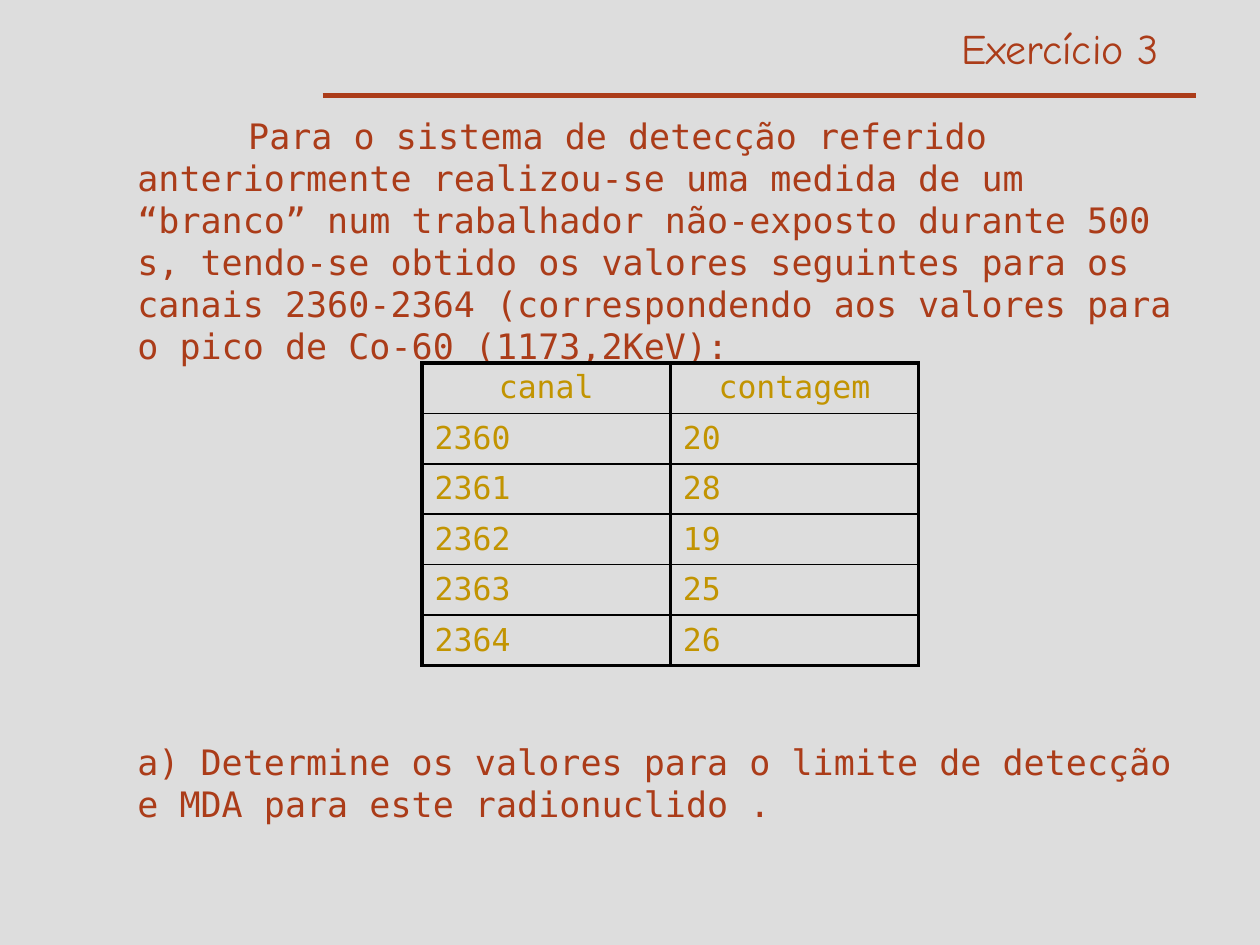
from dataclasses import dataclass

from lxml import etree
from pptx import Presentation
from pptx.dml.color import RGBColor
from pptx.enum.shapes import MSO_CONNECTOR
from pptx.enum.text import MSO_ANCHOR, PP_ALIGN
from pptx.oxml.ns import qn
from pptx.util import Inches, Pt

LEFT, CENTER, RIGHT = PP_ALIGN.LEFT, PP_ALIGN.CENTER, PP_ALIGN.RIGHT
MIDDLE = MSO_ANCHOR.MIDDLE
STRAIGHT = MSO_CONNECTOR.STRAIGHT
COLS, ROWS = 100, 75


@dataclass(frozen=True)
class Theme:
    back: str = "DDDDDD"
    rust: str = "AB3C19"
    gold: str = "C29401"
    black: str = "000000"
    hand: str = "Comic Neue"
    mono: str = "DejaVu Sans Mono"
    title: int = 24
    body: int = 20
    cell: int = 18
    rule: float = 3
    thick: float = 2.25
    thin: float = 1


THEME = Theme()
INTRO = (
    "Para o sistema de detecção referido anteriormente realizou-se uma medida "
    "de um “branco” num trabalhador não-exposto durante 500 s, tendo-se obtido "
    "os valores seguintes para os canais 2360-2364 (correspondendo aos valores "
    "para o pico de Co-60 (1173,2KeV):"
)
TASK = "a) Determine os valores para o limite de detecção e MDA para este radionuclido ."
COUNTS = [
    ("canal", "contagem"),
    ("2360", "20"),
    ("2361", "28"),
    ("2362", "19"),
    ("2363", "25"),
    ("2364", "26"),
]


def grid(units):
    return Inches(units * 10 / COLS)


def style(frame, text, font, size, color, align=LEFT):
    frame.text = text
    para = frame.paragraphs[0]
    para.alignment = align
    face = para.runs[0].font
    face.name = font
    face.size = Pt(size)
    face.color.rgb = RGBColor.from_string(color)
    return para


def add_text(slide, area, text, font, size, align=LEFT, indent=0):
    frame = slide.shapes.add_textbox(*map(grid, area)).text_frame
    frame.word_wrap = True
    frame.margin_left = frame.margin_right = 0
    para = style(frame, text, font, size, THEME.rust, align)
    if indent:
        para._p.get_or_add_pPr().set("indent", str(grid(indent)))


def add_rule(slide, left, right, top):
    rule = slide.shapes.add_connector(STRAIGHT, *map(grid, (left, top, right, top)))
    rule.line.color.rgb = RGBColor.from_string(THEME.rust)
    rule.line.width = Pt(THEME.rule)
    etree.SubElement(rule._element.spPr, qn("a:effectLst"))


def add_edge(props, side, width):
    edge = etree.Element(qn(f"a:ln{side}"), w=str(Pt(width)))
    fill = etree.SubElement(edge, qn("a:solidFill"))
    etree.SubElement(fill, qn("a:srgbClr"), val=THEME.black)
    return edge


def set_edges(cell, first, last):
    widths = {
        "L": THEME.thick,
        "R": THEME.thick,
        "T": THEME.thick if first else THEME.thin,
        "B": THEME.thick if last else THEME.thin,
    }
    props = cell._tc.get_or_add_tcPr()
    for spot, (side, width) in enumerate(widths.items()):
        props.insert(spot, add_edge(props, side, width))


def add_counts(slide, area, data):
    shape = slide.shapes.add_table(len(data), len(data[0]), *map(grid, area))
    table = shape.table
    table.first_row = table.horz_banding = False
    for row, values in enumerate(data):
        for col, value in enumerate(values):
            cell = table.cell(row, col)
            cell.fill.background()
            cell.vertical_anchor = MIDDLE
            align = LEFT if row else CENTER
            style(cell.text_frame, value, THEME.mono, THEME.cell, THEME.gold, align)
            set_edges(cell, row == 0, row == len(data) - 1)


def main():
    deck = Presentation()
    deck.slide_width, deck.slide_height = grid(COLS), grid(ROWS)
    slide = deck.slides.add_slide(deck.slide_layouts[6])
    fill = slide.background.fill
    fill.solid()
    fill.fore_color.rgb = RGBColor.from_string(THEME.back)

    left, width = 10.9, 82.6
    add_text(slide, (52, 1.3, 40, 5), "Exercício 3", THEME.hand, THEME.title, RIGHT)
    add_rule(slide, 25.6, 94.9, 7.6)
    add_text(slide, (left, 8.6, width, 20.5), INTRO, THEME.mono, THEME.body, indent=8.8)
    add_counts(slide, (33.5, 28.8, 39.4, 24), COUNTS)
    add_text(slide, (left, 58.3, width, 7.5), TASK, THEME.mono, THEME.body)
    deck.save("out.pptx")


if __name__ == "__main__":
    main()
